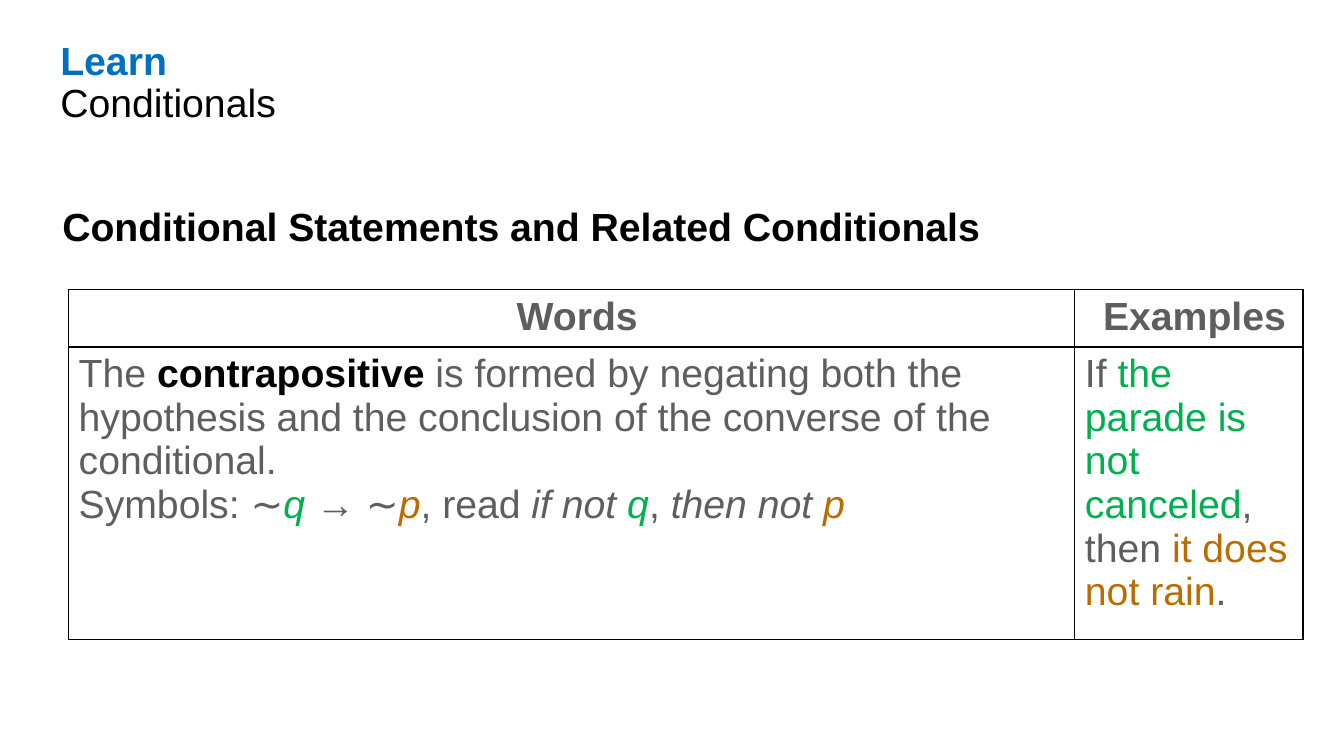
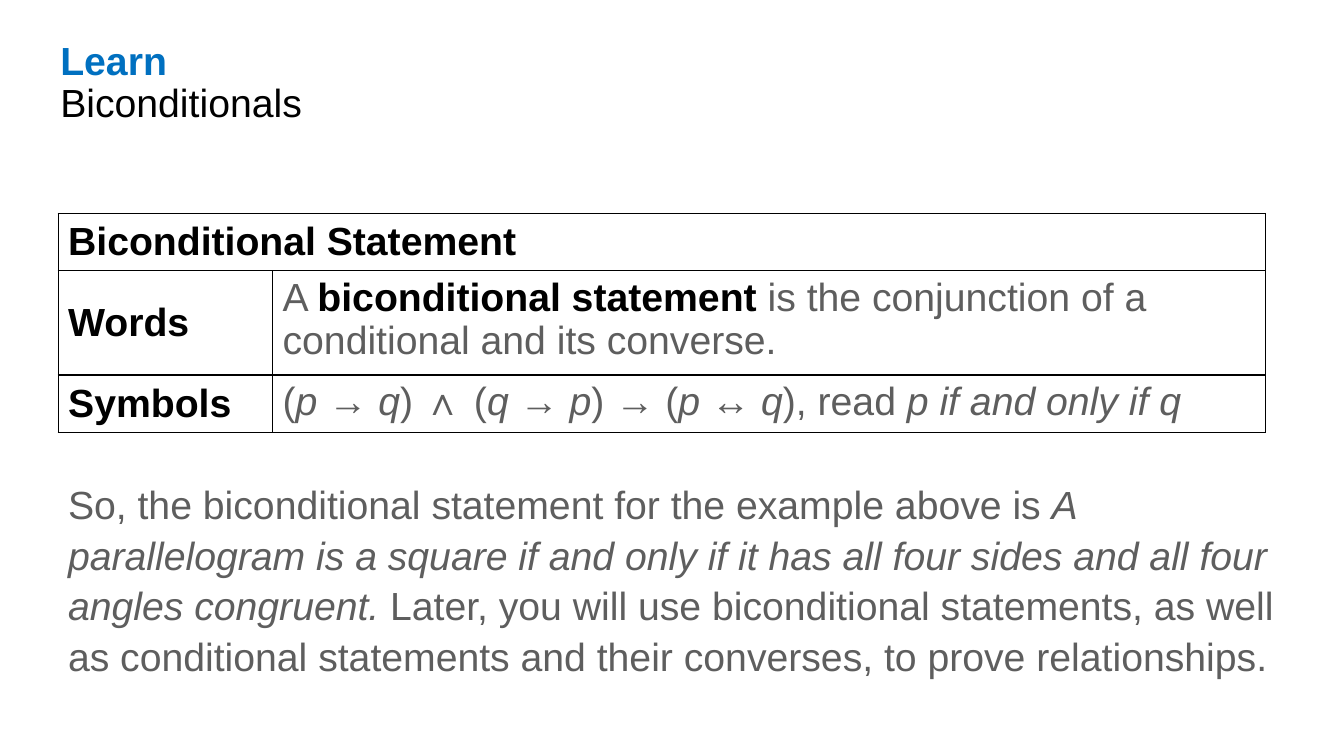
from lxml import etree
from pptx import Presentation
from pptx.dml.color import RGBColor
from pptx.enum import text
from pptx.oxml import ns
from pptx.util import Pt

COLORS = {
    "blue": "0070C0",
    "black": "000000",
    "gray": "5E5E5E",
    "green": "00B050",
    "orange": "B96D00",
}
FONT, SIZE = "Arial", 28
BORDER_WIDTH = 1

# Style name: colour, bold, italic
STYLES = {
    "label": ("blue", True, False),
    "title": ("black", False, False),
    "strong": ("black", True, False),
    "header": ("gray", True, False),
    "plain": ("gray", False, False),
    "italic": ("gray", False, True),
    "green": ("green", False, False),
    "orange": ("orange", False, False),
    "green italic": ("green", False, True),
    "orange italic": ("orange", False, True),
}

# A paragraph is a list of (words, style); a cell is a list of paragraphs.
CONTRAPOSITIVE = [
    [("The ", "plain"), ("contrapositive ", "strong"),
     ("is formed by negating both the hypothesis and the conclusion "
      "of the converse of the conditional.", "plain")],
    [("Symbols: ∼", "plain"), ("q ", "green italic"), ("→ ∼", "plain"),
     ("p", "orange italic"), (", read ", "plain"), ("if not ", "italic"),
     ("q", "green italic"), (", ", "plain"), ("then not ", "italic"),
     ("p", "orange italic")],
]
PARADE = [[
    ("If ", "plain"), ("the parade is not canceled", "green"),
    (", then ", "plain"), ("it does not rain", "orange"), (".", "plain"),
]]
DEFINITION = [[
    ("A ", "plain"), ("biconditional statement ", "strong"),
    ("is the conjunction of a conditional and its converse.", "plain"),
]]
SYMBOLS = [[
    ("(", "plain"), ("p ", "italic"), ("→ ", "plain"), ("q", "italic"),
    (") ∧ (", "plain"), ("q ", "italic"), ("→ ", "plain"), ("p", "italic"),
    (") → (", "plain"), ("p ", "italic"), ("↔ ", "plain"), ("q", "italic"),
    ("), read ", "plain"), ("p if and only if q", "italic"),
]]
CONCLUSION = [[
    ("So, the biconditional statement for the example above is ", "plain"),
    ("A parallelogram is a square if and only if it has all four sides "
     "and all four angles congruent. ", "italic"),
    ("Later, you will use biconditional statements, as well as conditional "
     "statements and their converses, to prove relationships.", "plain"),
]]

SLIDES = [
    {
        "title": "Conditionals",
        "text": {
            "at": (37.4, 141, 716.4, 38),
            "paragraphs": [[("Conditional Statements and Related Conditionals",
                             "strong")]],
        },
        "table": {
            "at": (49, 207),
            "columns": (718.8, 163),
            "heights": (38.6, 194.8),
            "rows": [
                [[[("Words", "header")]], [[("Examples", "header")]]],
                [CONTRAPOSITIVE, PARADE],
            ],
        },
    },
    {
        "title": "Biconditionals",
        "table": {
            "at": (41.5, 152.5),
            "columns": (153.2, 709.2),
            "heights": (38.6, 70, 38.6),
            "rows": [
                [[[("Biconditional Statement", "strong")]]],
                [[[("Words", "strong")]], DEFINITION],
                [[[("Symbols", "strong")]], SYMBOLS],
            ],
        },
        "text": {
            "at": (41.5, 337.5, 910, 143.3),
            "paragraphs": CONCLUSION,
            "spacing": 1.07,
        },
    },
]


def add_span(para, words, style):
    color, bold, italic = STYLES[style]
    span = para.add_run()
    span.text = words
    font = span.font
    font.name, font.size = FONT, Pt(SIZE)
    font.bold, font.italic = bold, italic
    font.color.rgb = RGBColor.from_string(COLORS[color])


def fill_text(frame, paragraphs):
    for index, spans in enumerate(paragraphs):
        para = frame.add_paragraph() if index else frame.paragraphs[0]
        for words, style in spans:
            add_span(para, words, style)


def add_box(slide, at):
    box = slide.shapes.add_textbox(*map(Pt, at))
    box.text_frame.word_wrap = True
    return box.text_frame


def add_title(slide, title):
    para = add_box(slide, (36, 26, 547, 101.5)).paragraphs[0]
    para.line_spacing = 0.9
    add_span(para, "Learn", "label")
    para.add_line_break()
    add_span(para, title, "title")


def add_text(slide, at, paragraphs, spacing=1.0):
    frame = add_box(slide, at)
    fill_text(frame, paragraphs)
    for para in frame.paragraphs:
        para.line_spacing = spacing


def outline_cell(cell):
    cell.fill.background()
    properties = cell._tc.get_or_add_tcPr()
    for index, side in enumerate(("lnL", "lnR", "lnT", "lnB")):
        line = etree.Element(ns.qn(f"a:{side}"), w=str(Pt(BORDER_WIDTH)))
        fill = etree.SubElement(line, ns.qn("a:solidFill"))
        etree.SubElement(fill, ns.qn("a:srgbClr"), val=COLORS["black"])
        properties.insert(index, line)


def add_table(slide, at, columns, heights, rows):
    """Add an outlined table; a row with a single cell spans all columns."""
    size = (sum(columns), sum(heights))
    table = slide.shapes.add_table(
        len(rows), len(columns), *map(Pt, at + size)).table
    table.first_row = table.horz_banding = False
    for column, width in zip(table.columns, columns):
        column.width = Pt(width)
    for row, height in zip(table.rows, heights):
        row.height = Pt(height)
    for cell in table.iter_cells():
        outline_cell(cell)
    for r, row in enumerate(rows):
        if len(row) == 1:
            table.cell(r, 0).merge(table.cell(r, len(columns) - 1))
        for c, paragraphs in enumerate(row):
            cell = table.cell(r, c)
            fill_text(cell.text_frame, paragraphs)
            style = paragraphs[0][0][1]
            if style == "header":
                cell.margin_left = Pt(15)
                cell.text_frame.paragraphs[0].alignment = text.PP_ALIGN.CENTER
            elif style == "strong":
                cell.vertical_anchor = text.MSO_ANCHOR.MIDDLE


def main():
    deck = Presentation()
    deck.slide_width, deck.slide_height = Pt(960), Pt(540)
    for content in SLIDES:
        slide = deck.slides.add_slide(deck.slide_layouts[6])
        add_title(slide, content["title"])
        add_text(slide, **content["text"])
        add_table(slide, **content["table"])
    deck.save("out.pptx")


if __name__ == "__main__":
    main()
